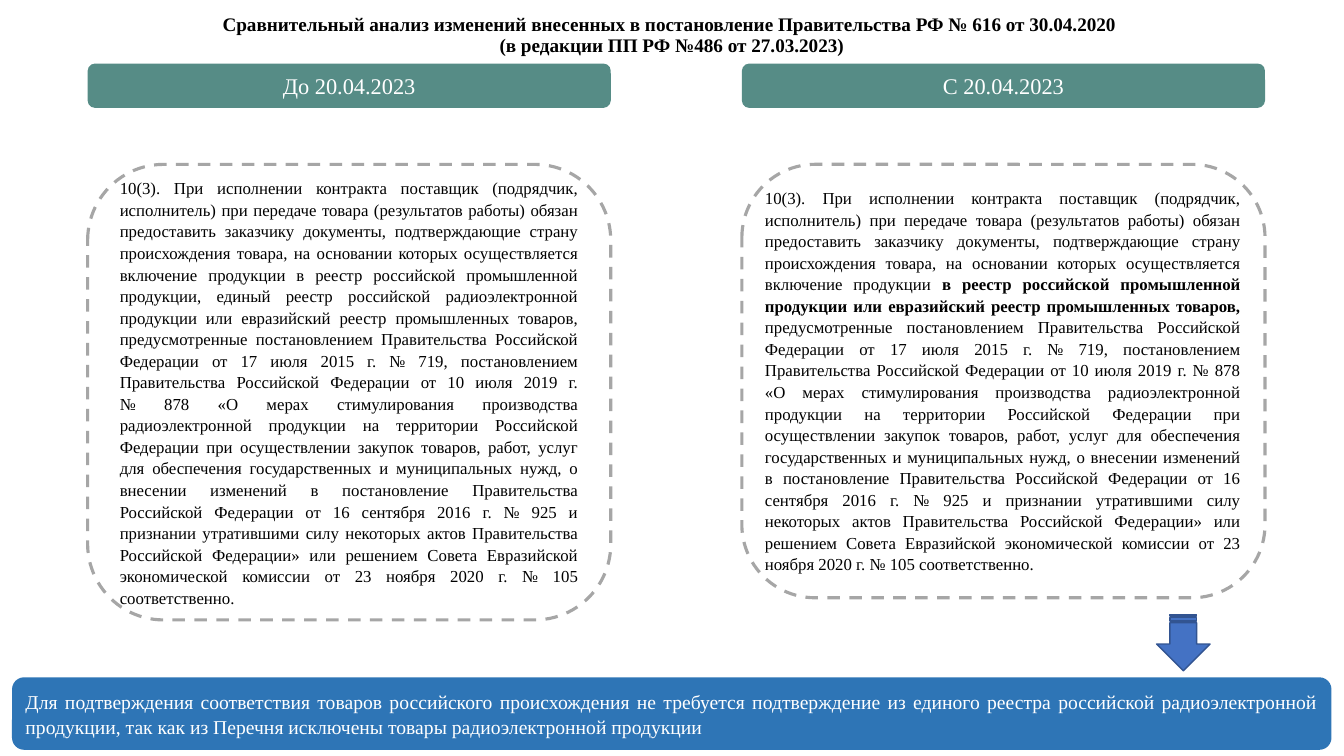
import pptx
import pptx.util
import pptx.dml.color
import pptx.enum.dml
import pptx.enum.shapes
import pptx.enum.text

Pt = pptx.util.Pt
SHAPES = pptx.enum.shapes.MSO_SHAPE
ALIGN = pptx.enum.text.PP_ALIGN
ANCHOR = pptx.enum.text.MSO_ANCHOR

FONT = "Times New Roman"
BLACK, WHITE = "000000", "FFFFFF"
TEAL, GREY, BLUE = "568C86", "A6A6A6", "2E75B6"
ARROW_FILL, ARROW_LINE = "4472C4", "325491"

TITLE = [
    "Сравнительный анализ изменений внесенных в постановление Правительства РФ № 616 от 30.04.2020 ",
    "(в редакции ПП РФ №486 от 27.03.2023)",
]
OPENING = (
    "10(3). При исполнении контракта поставщик (подрядчик, исполнитель) при передаче товара "
    "(результатов работы) обязан предоставить заказчику документы, подтверждающие страну "
    "происхождения товара, на основании которых осуществляется включение продукции "
)
OLD_REGISTERS = (
    "в реестр российской промышленной продукции, единый реестр российской радиоэлектронной "
    "продукции или евразийский реестр промышленных товаров, "
)
NEW_REGISTERS = (
    "в реестр российской промышленной продукции или евразийский реестр промышленных товаров, "
)
DECREES = (
    "предусмотренные постановлением Правительства Российской Федерации от 17 июля 2015 г. № 719, "
    "постановлением Правительства Российской Федерации от 10 июля 2019 г."
)
ENDING = (
    "№ 878 «О мерах стимулирования производства радиоэлектронной продукции на территории "
    "Российской Федерации при осуществлении закупок товаров, работ, услуг для обеспечения "
    "государственных и муниципальных нужд, о внесении изменений в постановление Правительства "
    "Российской Федерации от 16 сентября 2016 г. № 925 и признании утратившими силу некоторых "
    "актов Правительства Российской Федерации» или решением Совета Евразийской экономической "
    "комиссии от 23 ноября 2020 г. № 105 соответственно."
)
CONCLUSION = (
    "Для подтверждения соответствия товаров российского происхождения не требуется подтверждение "
    "из единого реестра российской радиоэлектронной продукции, так как из Перечня исключены "
    "товары радиоэлектронной продукции"
)


def color(value):
    return pptx.dml.color.RGBColor.from_string(value)


def write(shape, paragraphs, size, ink=BLACK, align=ALIGN.JUSTIFY, anchor=ANCHOR.MIDDLE, spacing=None):
    """Fill a shape with paragraphs, each a list of (text, bold) spans; \\v breaks a line."""
    frame = shape.text_frame
    frame.word_wrap = True
    frame.vertical_anchor = anchor
    for index, spans in enumerate(paragraphs):
        para = frame.paragraphs[0] if index == 0 else frame.add_paragraph()
        para.alignment = align
        para.line_spacing = spacing
        for text, bold in spans:
            for part, piece in enumerate(text.split("\v")):
                if part:
                    para.add_line_break()
                span = para.add_run()
                span.text = piece
                span.font.name = FONT
                span.font.size = Pt(size)
                span.font.bold = bold
                span.font.color.rgb = color(ink)


def add_box(page, kind, left, top, width, height, fill=None, line=None, weight=1):
    box = page.shapes.add_shape(kind, Pt(left), Pt(top), Pt(width), Pt(height))
    box.shadow.inherit = False
    if fill:
        box.fill.solid()
        box.fill.fore_color.rgb = color(fill)
    else:
        box.fill.background()
    if line:
        box.line.color.rgb = color(line)
        box.line.width = Pt(weight)
    else:
        box.line.fill.background()
    return box


def add_textbox(page, left, top, width, height):
    return page.shapes.add_textbox(Pt(left), Pt(top), Pt(width), Pt(height))


def add_title(page, left, top, width, height):
    write(add_textbox(page, left, top, width, height), [[(text, True)] for text in TITLE],
          13.7, align=ALIGN.CENTER, anchor=ANCHOR.BOTTOM, spacing=0.9)


def add_column(page, left, top, width, heading, frame_height):
    """Place a heading bar over a dashed frame and return the frame."""
    frame = add_box(page, SHAPES.ROUNDED_RECTANGLE, left, top + 72, width, frame_height,
                    line=GREY, weight=2.25)
    frame.line.dash_style = pptx.enum.dml.MSO_LINE.DASH
    bar = add_box(page, SHAPES.ROUNDED_RECTANGLE, left, top, width, 31.7, fill=TEAL)
    write(bar, [[(heading, False)]], 16, WHITE, ALIGN.CENTER)
    return frame


def add_before(page, left, top, width):
    frame = add_column(page, left, top, width, "До 20.04.2023", 325.4)
    text = OPENING + OLD_REGISTERS + DECREES + "\v" + ENDING
    write(frame, [[(text, False)]], 12, spacing=1.07)


def add_after(page, left, top, width):
    frame = add_column(page, left, top, width, "С 20.04.2023", 309.6)
    frame.adjustments[0] = 0.169
    spans = [(OPENING, False), (NEW_REGISTERS, True), (DECREES + " " + ENDING, False)]
    write(add_textbox(page, left + 9.4, top + 84.2, width - 19.5, 298), [spans], 12,
          anchor=ANCHOR.TOP, spacing=1.07)


def add_conclusion(page, left, top, width, height):
    arrow = add_box(page, SHAPES.STRIPED_RIGHT_ARROW, left + 816.5, top - 43.9, 40.3, 38.2,
                    fill=ARROW_FILL, line=ARROW_LINE)
    arrow.rotation = 90
    bar = add_box(page, SHAPES.ROUNDED_RECTANGLE, left, top, width, height, fill=BLUE)
    write(bar, [[(CONCLUSION, False)]], 14, WHITE, spacing=1.07)


def main():
    deck = pptx.Presentation()
    deck.slide_width, deck.slide_height = Pt(960), Pt(540)
    page = deck.slides.add_slide(deck.slide_layouts[6])
    add_before(page, 62.6, 45.4, 373.7)
    add_after(page, 529.9, 45.4, 373.7)
    add_conclusion(page, 8.6, 483.8, 942.5, 51.8)
    add_title(page, 23.8, 0, 912.2, 43.9)
    deck.save("out.pptx")


if __name__ == "__main__":
    main()
